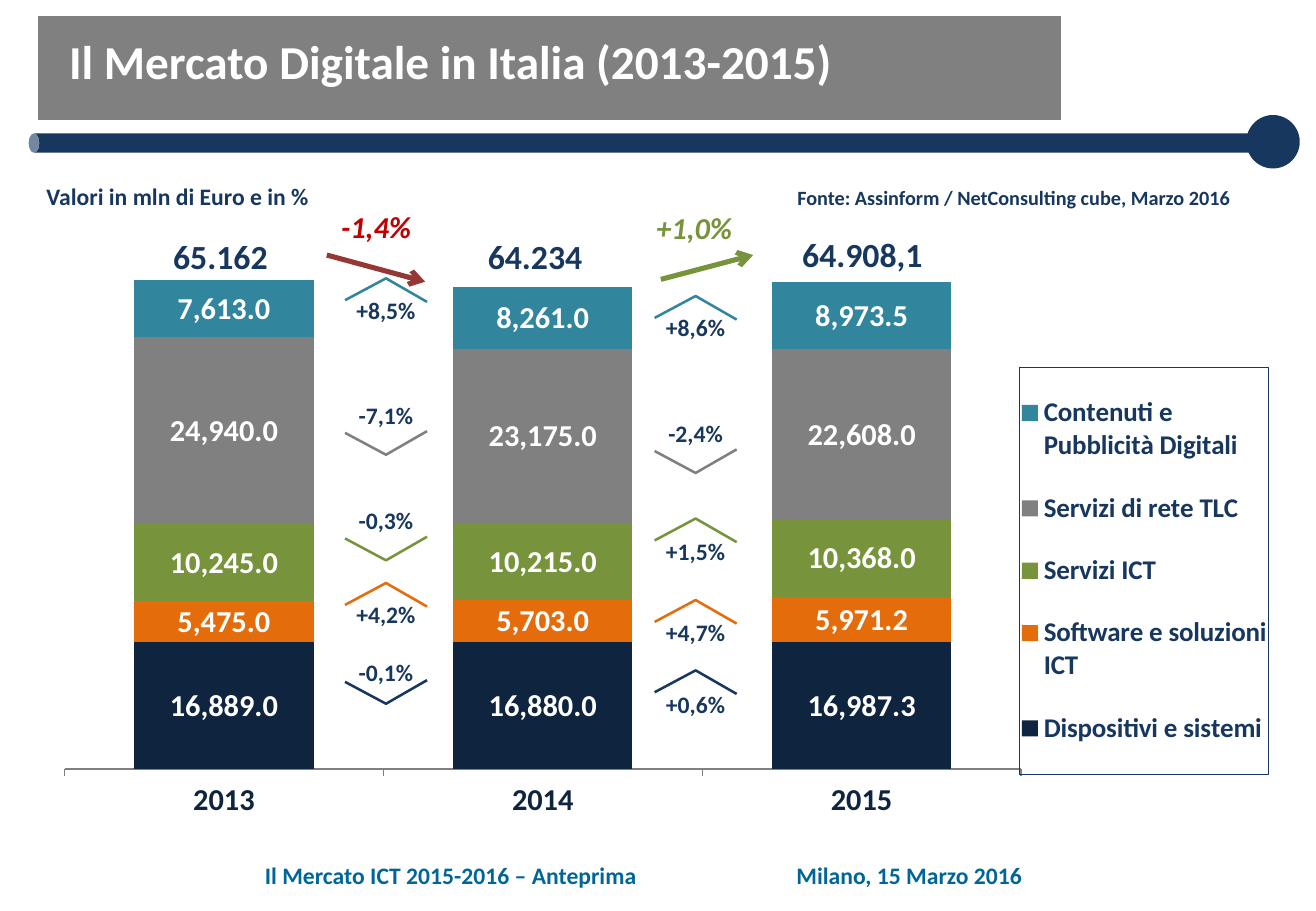
import lxml.etree
import pptx
import pptx.chart.data
import pptx.dml.color
import pptx.enum.chart
import pptx.enum.shapes
import pptx.enum.text
import pptx.oxml
import pptx.oxml.ns
import pptx.util

Pt = pptx.util.Pt
SHAPES = pptx.enum.shapes.MSO_SHAPE
ALIGN = pptx.enum.text.PP_ALIGN
NAVY, GREY, WHITE = "17375E", "808080", "FFFFFF"
YEARS = ["2013", "2014", "2015"]
SEGMENTS = [
    ("Dispositivi e sistemi", "0F243E", (16889, 16880, 16987.3)),
    ("Software e soluzioni ICT", "E46C0A", (5475, 5703, 5971.2)),
    ("Servizi ICT", "77933C", (10245, 10215, 10368)),
    ("Servizi di rete TLC", GREY, (24940, 23175, 22608)),
    ("Contenuti e Pubblicità Digitali", "31859C", (7613, 8261, 8973.5)),
]
CHEVRON_COLOURS = [NAVY] + [colour for _, colour, _ in SEGMENTS[1:]]


def rgb(colour):
    """Turn a hex string into a colour."""
    return pptx.dml.color.RGBColor.from_string(colour)


def style_font(font, size, colour, italic=False):
    """Apply the bold slide typeface."""
    font.name, font.size, font.bold, font.italic = "Calibri", Pt(size), True, italic
    font.color.rgb = rgb(colour)


def add_label(slide, box, text, size, colour=NAVY, italic=False):
    """Place one centred, unwrapped line of text in a box."""
    label = slide.shapes.add_textbox(*map(Pt, box))
    label.text_frame.word_wrap = False
    label.text_frame.text = text
    paragraph = label.text_frame.paragraphs[0]
    paragraph.alignment = ALIGN.CENTER
    style_font(paragraph.runs[0].font, size, colour, italic)


def add_solid(slide, kind, box, fill):
    """Place a filled shape without outline."""
    solid = slide.shapes.add_shape(kind, *map(Pt, box))
    solid.shadow.inherit = False
    solid.fill.solid()
    solid.fill.fore_color.rgb = rgb(fill)
    solid.line.fill.background()
    return solid


def add_header(slide, box, text):
    """Draw the title banner and the rod with its knob."""
    left, top, width, height = box
    banner_width = 607
    rod_length, rod_thickness = 727.2, 11.5
    rod_box = (left - 5 + (rod_length - rod_thickness) / 2, top + 75.6 - rod_length / 2,
               rod_thickness, rod_length)
    rod = add_solid(slide, SHAPES.CAN, rod_box, NAVY)
    rod.rotation = 270
    rod.adjustments[0] = 0.551
    banner = add_solid(slide, SHAPES.RECTANGLE, (left, top, banner_width, height), GREY)
    banner.line.color.rgb = rgb(WHITE)
    banner.line.width = Pt(0.75)
    add_solid(slide, SHAPES.OVAL, (left + width - 31.7, top + 59, 31.7, 31.7), NAVY)

    title = slide.shapes.title
    title.element.getparent().append(title.element)
    title.left, title.top = Pt(left + 11.8), Pt(top + 12.6)
    title.width, title.height = Pt(banner_width - 12.2), Pt(72)
    frame = title.text_frame
    frame.text = text
    frame.auto_size = pptx.enum.text.MSO_AUTO_SIZE.NONE
    frame.vertical_anchor = pptx.enum.text.MSO_ANCHOR.TOP
    paragraph = frame.paragraphs[0]
    paragraph.alignment = ALIGN.LEFT
    paragraph.line_spacing = 0.8
    style_font(paragraph.runs[0].font, 28, WHITE)


def set_layout(part, box, inner=False):
    """Fix the fractional position of a chart part."""
    namespace = pptx.oxml.ns.nsdecls("c")
    target = '<c:layoutTarget val="inner"/>' if inner else ""
    modes = '<c:xMode val="edge"/><c:yMode val="edge"/>'
    sizes = "".join(f'<c:{key} val="{value}"/>' for key, value in zip("xywh", box))
    layout = pptx.oxml.parse_xml(
        f"<c:layout {namespace}><c:manualLayout>{target}{modes}{sizes}</c:manualLayout></c:layout>")
    for old in part.findall(pptx.oxml.ns.qn("c:layout")):
        part.remove(old)
    position = part.find(pptx.oxml.ns.qn("c:legendPos"))
    part.insert(0 if position is None else 1, layout)


def add_market_chart(slide, box):
    """Draw the stacked columns with their legend."""
    market = pptx.chart.data.CategoryChartData()
    market.categories = YEARS
    for name, _, values in SEGMENTS:
        market.add_series(name, values)
    chart = slide.shapes.add_chart(
        pptx.enum.chart.XL_CHART_TYPE.COLUMN_STACKED, *map(Pt, box), market).chart
    chart.has_title = False
    chart.font.name, chart.font.size = "Arial", Pt(18)
    chart.font.color.rgb = rgb("000000")

    years = chart.category_axis
    years.major_tick_mark = pptx.enum.chart.XL_TICK_MARK.OUTSIDE
    years.format.line.color.rgb = rgb(GREY)
    style_font(years.tick_labels.font, 18, "0F243E")
    amounts = chart.value_axis
    amounts.minimum_scale, amounts.maximum_scale = 0, 70000
    amounts.has_major_gridlines = False
    amounts.visible = False

    plot = chart.plots[0]
    plot.gap_width, plot.overlap = 78, 100
    plot.vary_by_categories = False
    for series, (_, colour, _) in zip(plot.series, SEGMENTS):
        series.format.fill.solid()
        series.format.fill.fore_color.rgb = rgb(colour)
        labels = series.data_labels
        labels.show_value = True
        labels.number_format, labels.number_format_is_linked = "#,##0.0", False
        style_font(labels.font, 18, WHITE)

    chart.has_legend = True
    legend = chart.legend
    legend.position = pptx.enum.chart.XL_LEGEND_POSITION.RIGHT
    legend.include_in_layout = False
    style_font(legend.font, 16, NAVY)
    outline = pptx.oxml.parse_xml(
        f'<c:spPr {pptx.oxml.ns.nsdecls("c", "a")}><a:ln w="9525"><a:solidFill>'
        f'<a:srgbClr val="{NAVY}"/></a:solidFill></a:ln></c:spPr>')
    legend_part = chart.element.find(".//" + pptx.oxml.ns.qn("c:legend"))
    legend_part.find(pptx.oxml.ns.qn("c:txPr")).addprevious(outline)
    set_layout(legend_part, (0.783, 0.234, 0.2, 0.675))
    set_layout(chart.element.find(".//" + pptx.oxml.ns.qn("c:plotArea")),
               (0.015, 0.03, 0.769, 0.87), True)


def add_trend(slide, box, rising, colour):
    """Draw the arrow of a total across a box."""
    left, top, width, height = box
    start, end = (top + height, top) if rising else (top, top + height)
    arrow = slide.shapes.add_connector(
        pptx.enum.shapes.MSO_CONNECTOR.STRAIGHT, Pt(left), Pt(start), Pt(left + width), Pt(end))
    arrow.line.color.rgb = rgb(colour)
    arrow.line.width = Pt(3)
    properties = arrow.element.spPr
    lxml.etree.SubElement(
        properties.find(pptx.oxml.ns.qn("a:ln")), pptx.oxml.ns.qn("a:tailEnd"), type="arrow")
    lxml.etree.SubElement(properties, pptx.oxml.ns.qn("a:effectLst"))


def add_changes(slide, box, changes):
    """Draw the chevron and percentage of each segment in a column."""
    left, top, width, _ = box
    margin = 6
    for colour, (percent, chevron_top, text_top) in zip(CHEVRON_COLOURS, changes):
        heights = (13, 0, 14) if percent.startswith("+") else (1, 14, 0)
        points = [(Pt(left + width * step / 2), Pt(top + chevron_top + height))
                  for step, height in enumerate(heights)]
        builder = slide.shapes.build_freeform(*points[0])
        builder.add_line_segments(points[1:], close=False)
        chevron = builder.convert_to_shape()
        chevron.shadow.inherit = False
        chevron.fill.background()
        chevron.line.color.rgb = rgb(colour)
        chevron.line.width = Pt(1.5)
        add_label(slide, (left - margin, top + text_top, width + 2 * margin, 24.5), percent, 14)


def main():
    """Build the slide and save it."""
    deck = pptx.Presentation()
    deck.slide_width, deck.slide_height = Pt(780), Pt(540)
    slide = deck.slides.add_slide(deck.slide_layouts[5])
    add_header(slide, (22, 9.2, 748.4, 62.6), "Il Mercato Digitale in Italia (2013-2015)")
    add_market_chart(slide, (27.2, 133.9, 737.3, 357.8))

    add_label(slide, (19.6, 104, 171.4, 24.5), "Valori in mln di Euro e in %", 14)
    add_label(slide, (462.4, 106.4, 277.2, 21.6),
              "Fonte: Assinform / NetConsulting cube, Marzo 2016", 12)
    for total, left, top in [("65.162", 87.5, 136), ("64.234", 274, 136), ("64.908,1", 468, 135)]:
        add_label(slide, (left, top, 86.4, 31.7), total, 20)

    add_label(slide, (194.8, 119.7, 56.2, 28.8), "-1,4%", 18, "C00000", True)
    add_trend(slide, (193.7, 151.2, 58.3, 15.8), False, "953735")
    add_label(slide, (381.6, 120.2, 59.8, 28.8), "+1,0%", 18, "77933C", True)
    add_trend(slide, (391.7, 151.2, 54.7, 14.4), True, "77933C")

    add_changes(slide, (204.5, 165, 48.6, 252), [
        ("-0,1%", 238.2, 221.6), ("+4,2%", 180.6, 187.1), ("-0,3%", 153.2, 131.6),
        ("-7,1%", 90.6, 69), ("+8,5%", 0, 7.1)])
    add_changes(slide, (388, 175.5, 48.6, 236), [
        ("+0,6%", 221.9, 229.9), ("+4,7%", 180.2, 187.4), ("+1,5%", 131.9, 139.1),
        ("-2,4%", 90.9, 69.3), ("+8,6%", 0, 6.7)])

    add_label(slide, (147.2, 506.9, 240, 24.5), "Il Mercato ICT 2015-2016 – Anteprima", 14, "006699")
    add_label(slide, (459.5, 506.9, 159, 24.5), "Milano, 15 Marzo 2016", 14, "006699")
    deck.save("out.pptx")


if __name__ == "__main__":
    main()
